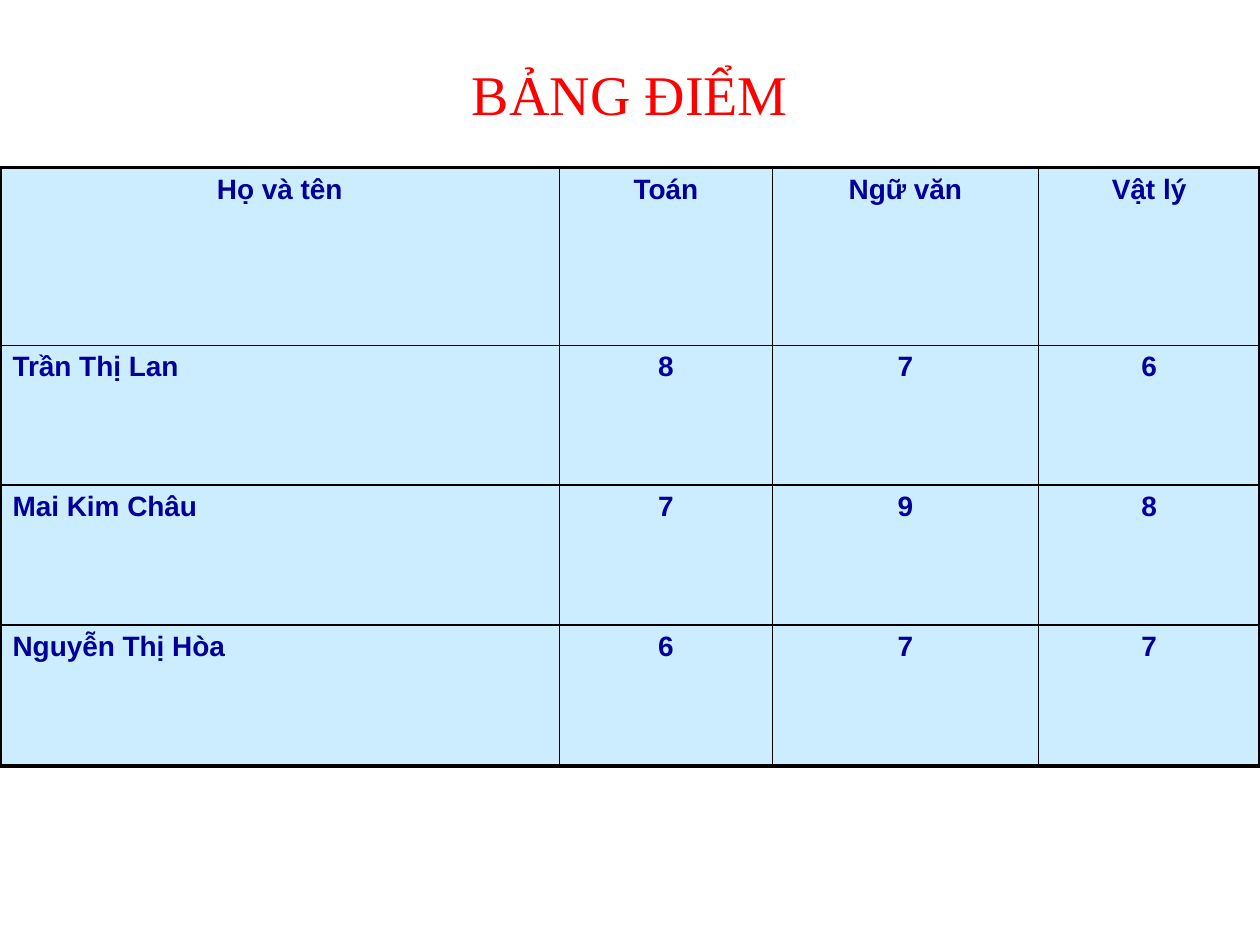
from lxml.etree import SubElement
from pptx import Presentation
from pptx.dml.color import RGBColor
from pptx.enum.text import MSO_ANCHOR, MSO_AUTO_SIZE, PP_ALIGN
from pptx.oxml.ns import qn
from pptx.util import Cm, Pt

COLORS = {"title": "FF0000", "text": "000099", "cell": "CCECFF", "border": "000000"}
OUTER_WIDTH, INNER_WIDTH = Pt(2.25), Pt(1)
COLUMN_WIDTHS = [11.28, 4.29, 5.36, 4.47]
ROW_HEIGHTS = [3.58, 2.82, 2.82, 2.84]
GRADES = [
    ["Họ và tên", "Toán", "Ngữ văn", "Vật lý"],
    ["Trần Thị Lan", "8", "7", "6"],
    ["Mai Kim Châu", "7", "9", "8"],
    ["Nguyễn Thị Hòa", "6", "7", "7"],
]


def format_text(text_frame, alignment, font_name, size, color, bold=False):
    for paragraph in text_frame.paragraphs:
        paragraph.alignment = alignment
        for run in paragraph.runs:
            run.font.name = font_name
            run.font.size = Pt(size)
            run.font.bold = bold
            run.font.color.rgb = RGBColor.from_string(COLORS[color])


def set_borders(cell, is_outer):
    """Draw the four sides; is_outer maps each side to whether it is on the table edge."""
    properties = cell._tc.get_or_add_tcPr()
    for side in "LRTB":
        width = OUTER_WIDTH if is_outer[side] else INNER_WIDTH
        line = SubElement(properties, qn(f"a:ln{side}"), w=str(width))
        fill = SubElement(line, qn("a:solidFill"))
        SubElement(fill, qn("a:srgbClr"), val=COLORS["border"])


def add_title(slide, text):
    title = slide.shapes.title
    title.left, title.top, title.width, title.height = Cm(0), Cm(1.07), Cm(25.4), Cm(1.62)
    text_frame = title.text_frame
    text_frame.text = text
    text_frame.word_wrap = True
    text_frame.auto_size = MSO_AUTO_SIZE.SHAPE_TO_FIT_TEXT
    text_frame.vertical_anchor = MSO_ANCHOR.TOP
    format_text(text_frame, PP_ALIGN.CENTER, "Times New Roman", 32, "title")


def add_grade_table(slide):
    last_row, last_column = len(GRADES) - 1, len(GRADES[0]) - 1
    table = slide.shapes.add_table(
        len(GRADES), len(GRADES[0]), Cm(0), Cm(3.38),
        Cm(sum(COLUMN_WIDTHS)), Cm(sum(ROW_HEIGHTS)),
    ).table
    for column, width in zip(table.columns, COLUMN_WIDTHS):
        column.width = Cm(width)
    for row, height in zip(table.rows, ROW_HEIGHTS):
        row.height = Cm(height)

    for r, values in enumerate(GRADES):
        for c, value in enumerate(values):
            cell = table.cell(r, c)
            cell.text_frame.text = value
            is_name = r > 0 and c == 0
            alignment = PP_ALIGN.JUSTIFY if is_name else PP_ALIGN.CENTER
            format_text(cell.text_frame, alignment, "Arial", 16, "text", bold=True)
            set_borders(cell, {"L": c == 0, "R": c == last_column,
                               "T": r == 0, "B": r == last_row})
            cell.fill.solid()
            cell.fill.fore_color.rgb = RGBColor.from_string(COLORS["cell"])


def main():
    presentation = Presentation()
    presentation.slide_width, presentation.slide_height = Cm(25.4), Cm(19.05)
    slide = presentation.slides.add_slide(presentation.slide_layouts[5])
    add_title(slide, "BẢNG ĐIỂM")
    add_grade_table(slide)
    presentation.save("out.pptx")


if __name__ == "__main__":
    main()
